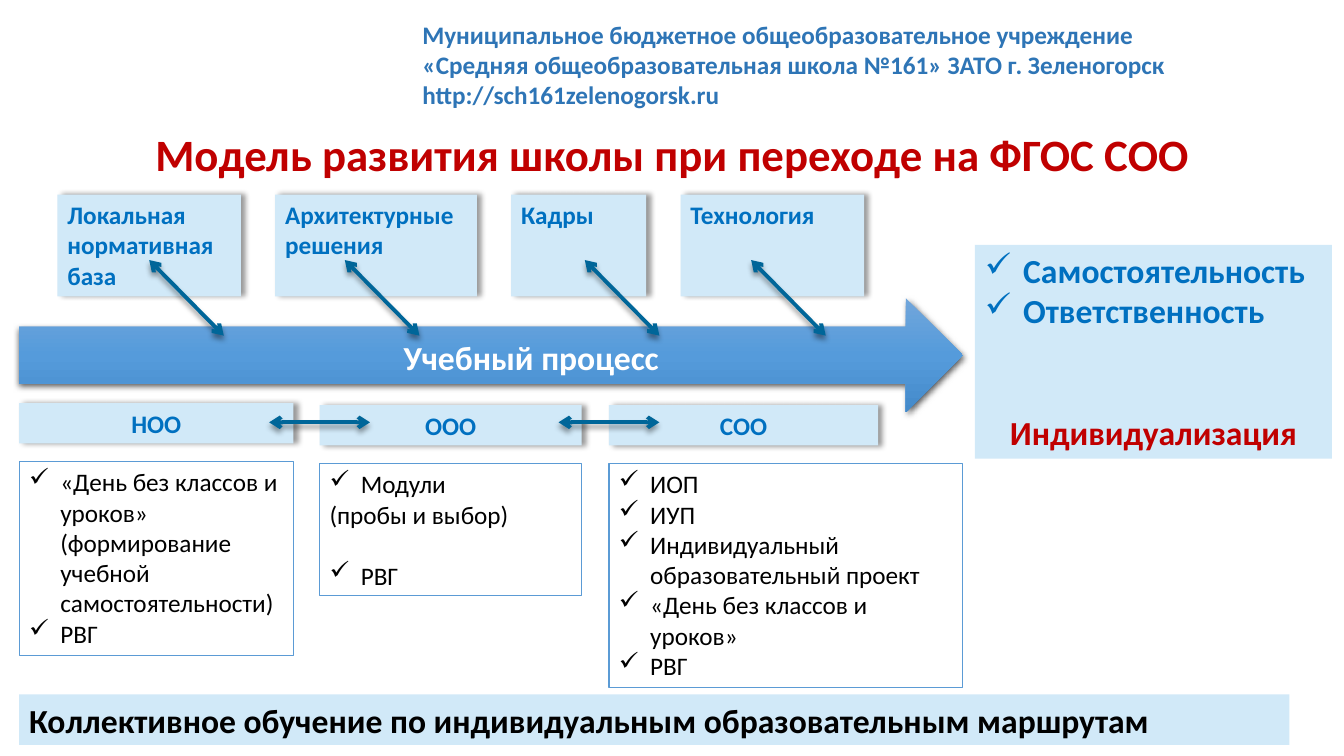
"""Builds the slide with the school development model."""
import copy

import pptx
import pptx.dml.color
import pptx.enum.dml
import pptx.enum.shapes
import pptx.enum.text
import pptx.oxml
import pptx.oxml.ns
import pptx.util

PX = 9144
FONT = "Calibri"
COLORS = {
    "header": "2E75B6", "accent": "C00000", "label": "0070C0", "panel": "D1E9F8",
    "outline": "5B9BD5", "link": "006699", "black": "000000", "white": "FFFFFF",
}
GRADIENT = [(0, "71A6DB"), (0.5, "559BDB"), (1, "448ACA")]
CENTER = pptx.enum.text.PP_ALIGN.CENTER
MIDDLE = pptx.enum.text.MSO_ANCHOR.MIDDLE
SHAPES = pptx.enum.shapes.MSO_SHAPE
qn = pptx.oxml.ns.qn


def px(*lengths):
    return [length * PX for length in lengths]


def rgb(name):
    return pptx.dml.color.RGBColor.from_string(COLORS.get(name, name))


def element(markup):
    return pptx.oxml.parse_xml(markup.replace(" ", f" {pptx.oxml.ns.nsdecls('a')} ", 1))


def cast_shadow(shape, alpha=40, blur=4, distance=3, angle=0):
    properties = shape._element.spPr
    effects = properties.find(qn("a:effectLst"))
    if effects is None:
        effects = element("<a:effectLst />")
        properties.append(effects)
    effects.append(element(
        f'<a:outerShdw blurRad="{int(blur * 12700)}" dist="{int(distance * 12700)}" '
        f'dir="{angle * 60000}" algn="tl" rotWithShape="0">'
        f'<a:srgbClr val="{COLORS["black"]}"><a:alpha val="{alpha * 1000}"/></a:srgbClr>'
        "</a:outerShdw>"))


def write(box, lines, size=18, color="label", bold=True, align=None, anchor=None, spacing=None):
    """Fill a box with paragraphs, each a text or a (text, options) pair."""
    frame = box.text_frame
    frame.word_wrap = True
    frame.vertical_anchor = anchor or pptx.enum.text.MSO_ANCHOR.TOP
    for number, line in enumerate(lines):
        text, options = (line, {}) if isinstance(line, str) else line
        para = frame.paragraphs[0] if number == 0 else frame.add_paragraph()
        para.alignment = options.get("align", align) or pptx.enum.text.PP_ALIGN.LEFT
        if spacing:
            para.line_spacing = spacing
        if "before" in options:
            para.space_before = pptx.util.Pt(options["before"])
        if "indent" in options:
            properties = para._p.get_or_add_pPr()
            properties.set("marL", str(options["indent"] * PX))
            properties.set("indent", str(-options["indent"] * PX))
            properties.append(element('<a:buChar char="✓"/>'))
        for position, part in enumerate(text.split("\n")):
            if position:
                para.add_line_break()
            span = para.add_run()
            span.text = part
            span.font.name = FONT
            span.font.size = pptx.util.Pt(size)
            span.font.bold = bold
            span.font.color.rgb = rgb(options.get("color", color))


def add_text(page, place, lines, **style):
    write(page.shapes.add_textbox(*px(*place)), lines, **style)


def add_panel(page, place, lines, shadow=True, fill="panel", line=None, **style):
    panel = page.shapes.add_shape(SHAPES.RECTANGLE, *px(*place))
    panel.shadow.inherit = False
    if fill:
        panel.fill.solid()
        panel.fill.fore_color.rgb = rgb(fill)
    else:
        panel.fill.background()
    if line:
        panel.line.color.rgb = rgb(line)
        panel.line.width = pptx.util.Pt(0.75)
    else:
        panel.line.fill.background()
    if shadow:
        cast_shadow(panel)
    write(panel, lines, **style)


def add_process_arrow(page, place):
    arrow = page.shapes.add_shape(SHAPES.RIGHT_ARROW, *px(*place))
    arrow.shadow.inherit = False
    arrow.line.fill.background()
    arrow.fill.gradient()
    arrow.fill.gradient_angle = 270
    stops = arrow._element.spPr.find(qn("a:gradFill")).find(qn("a:gsLst"))
    stops.insert(1, copy.deepcopy(stops[0]))
    for stop, (position, color) in zip(arrow.fill.gradient_stops, GRADIENT):
        stop.position = position
        stop.color.rgb = rgb(color)
    cast_shadow(arrow, alpha=63, blur=4.5, distance=1.5, angle=90)


def add_link(page, left, top, width, height):
    link = page.shapes.add_connector(
        pptx.enum.shapes.MSO_CONNECTOR.STRAIGHT, *px(left, top, left + width, top + height))
    link.line.color.rgb = rgb("link")
    link.line.width = pptx.util.Pt(2.75)
    for end in ("headEnd", "tailEnd"):
        link.line._get_or_add_ln().append(element(f'<a:{end} type="arrow"/>'))
    cast_shadow(link, angle=90)


def checked(text, indent=31, **options):
    return text, {"indent": indent, **options}


def main():
    deck = pptx.Presentation()
    deck.slide_width, deck.slide_height = px(1333, 750)
    page = deck.slides.add_slide(deck.slide_layouts[6])

    add_text(page, (409, 14, 831, 101), [
        "Муниципальное бюджетное общеобразовательное учреждение\n"
        "«Средняя общеобразовательная школа №161» ЗАТО г. Зеленогорск",
        "http://sch161zelenogorsk.ru"], color="header")
    add_text(page, (92, 121, 1150, 70), ["Модель развития школы при переходе на ФГОС СОО"],
             size=32, color="accent", align=CENTER, anchor=MIDDLE, spacing=0.9)

    add_process_arrow(page, (19, 296, 936, 113))
    add_text(page, (204, 329, 646, 50), ["Учебный процесс"],
             size=24, color="white", align=CENTER)

    resources = [
        (57, 182, 148, "Локальная нормативная база"),
        (273, 200, 342, "Архитектурные решения"),
        (507, 134, 580, "Кадры"),
        (675, 182, 745, "Технология"),
    ]
    for left, width, _, name in resources:
        add_panel(page, (left, 193, width, 101), [name])

    add_panel(page, (967, 243, 354, 212), [
        checked("Самостоятельность", 38), checked("Ответственность", 38),
        ("Индивидуализация", {"align": CENTER, "color": "accent", "before": 58})],
        shadow=False, size=24)

    stages = [
        (19, 400, 272, "НОО", 272, 192, [
            checked("«День без классов и уроков» (формирование учебной самостоятельности)"),
            checked("РВГ")]),
        (317, 402, 260, "ООО", 260, 131, [
            checked("Модули"), "(пробы и выбор)", checked("РВГ", before=22)]),
        (604, 402, 267, "СОО", 351, 222, [
            checked("ИОП"), checked("ИУП"),
            checked("Индивидуальный\nобразовательный проект"),
            checked("«День без классов и уроков»"), checked("РВГ")]),
    ]
    for left, top, width, name, list_width, list_height, lines in stages:
        add_panel(page, (left, top, width, 40), [name], align=CENTER)
        add_panel(page, (left, top + 58, list_width, list_height), lines, shadow=False,
                  fill=None, line="outline", color="black", bold=False)

    add_panel(page, (19, 689, 1260, 50),
              ["Коллективное обучение по индивидуальным образовательным маршрутам"],
              shadow=False, size=24, color="black")

    for _, _, link_left, _ in resources:
        add_link(page, link_left, 258, 74, 75)
    for link_left in (267, 554):
        add_link(page, link_left, 419, 100, 0)

    deck.save("out.pptx")


if __name__ == "__main__":
    main()
